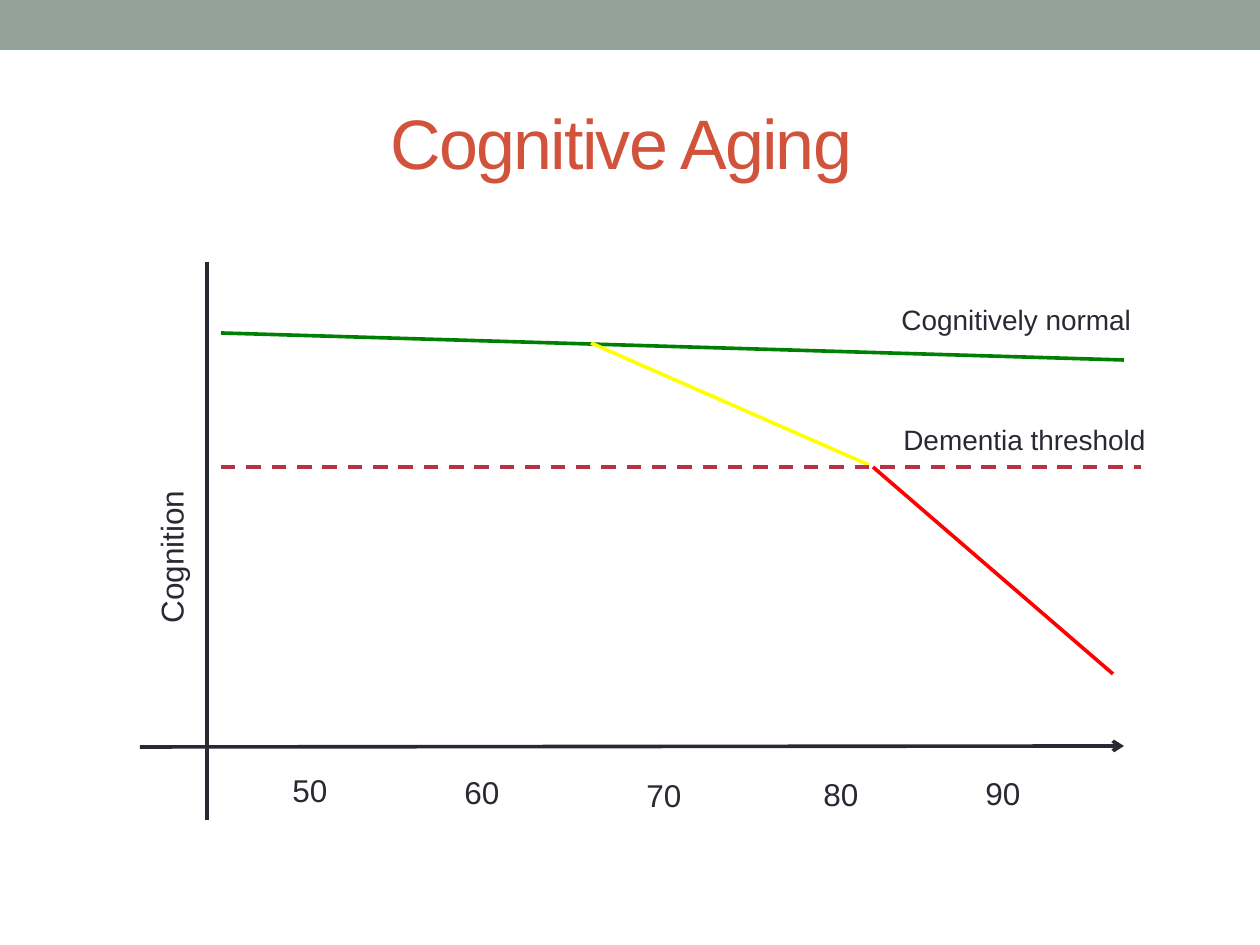
from lxml.etree import SubElement
from pptx import Presentation
from pptx.dml.color import RGBColor
from pptx.enum.dml import MSO_LINE
from pptx.enum.shapes import MSO_CONNECTOR, MSO_SHAPE
from pptx.enum.text import MSO_ANCHOR, MSO_AUTO_SIZE, PP_ALIGN
from pptx.oxml.ns import qn
from pptx.util import Emu, Pt

HUES = {
    "bar": "93A299", "title": "D2533C", "ink": "292934", "normal": "008000",
    "decline": "FFFF00", "dementia": "FF0000", "limit": "B73244",
}


def px(*nums):
    """Turn pixels into EMU."""
    return [Emu(round(num * 914400 / 126)) for num in nums]


def hue(name):
    """Look up a colour by its role."""
    return RGBColor.from_string(HUES[name])


def style(para, size, name):
    """Set the font of a paragraph."""
    para.font.name = "Arial"
    para.font.size = Pt(size)
    para.font.color.rgb = hue(name)


def add_bar(slide):
    """Draw the band along the top edge."""
    bar = slide.shapes.add_shape(MSO_SHAPE.RECTANGLE, *px(0, 0, 1260, 50))
    bar.shadow.inherit = False
    bar.fill.solid()
    bar.fill.fore_color.rgb = hue("bar")
    bar.line.fill.background()


def add_title(slide, text):
    """Fill and place the title."""
    title = slide.shapes.title
    title.left, title.top, title.width, title.height = px(63, 73, 1134, 136)
    frame = title.text_frame
    frame.text = text
    frame.vertical_anchor = MSO_ANCHOR.MIDDLE
    para = frame.paragraphs[0]
    para.alignment = PP_ALIGN.CENTER
    style(para, 40, "title")
    para.runs[0].font._element.set("spc", "-100")


def add_line(slide, ends, name, dash=False, arrow=False):
    """Draw a straight line between two points."""
    line = slide.shapes.add_connector(MSO_CONNECTOR.STRAIGHT, *px(*ends))
    line.line.color.rgb = hue(name)
    line.line.width = Pt(2.08)
    if dash:
        line.line.dash_style = MSO_LINE.DASH
    if arrow:
        SubElement(line.line._get_or_add_ln(), qn("a:tailEnd"), type="arrow")
    SubElement(line._element.spPr, qn("a:effectLst"))


def add_label(slide, text, box, size, turn=0):
    """Add a one-line label."""
    label = slide.shapes.add_textbox(*px(*box))
    label.rotation = turn
    frame = label.text_frame
    frame.word_wrap = False
    frame.auto_size = MSO_AUTO_SIZE.SHAPE_TO_FIT_TEXT
    frame.text = text
    style(frame.paragraphs[0], size, "ink")


def main():
    """Build the slide and save it."""
    deck = Presentation()
    deck.slide_width, deck.slide_height = px(1260, 945)
    slide = deck.slides.add_slide(deck.slide_layouts[5])
    add_bar(slide)
    add_title(slide, "Cognitive Aging ")

    add_line(slide, (207, 262, 207, 820), "ink")
    add_line(slide, (140, 747, 1124, 746), "ink", arrow=True)
    add_line(slide, (221, 333, 1124, 360), "normal")
    add_line(slide, (591, 343, 869, 465), "decline")
    add_line(slide, (873, 467, 1113, 674), "dementia")
    add_line(slide, (221, 467, 1141, 467), "limit", dash=True)

    add_label(slide, "Cognitively normal", (889, 296, 258, 47), 16)
    add_label(slide, "Dementia threshold", (891, 416, 271, 47), 16)
    add_label(slide, "Cognition", (91, 531, 160, 50), 18, 270)
    ticks = [(280, 765), (452, 767), (634, 770), (811, 769), (973, 768)]
    for age, (left, top) in zip(range(50, 100, 10), ticks):
        add_label(slide, str(age), (left, top, 60, 50), 18)
    deck.save("out.pptx")


if __name__ == "__main__":
    main()
